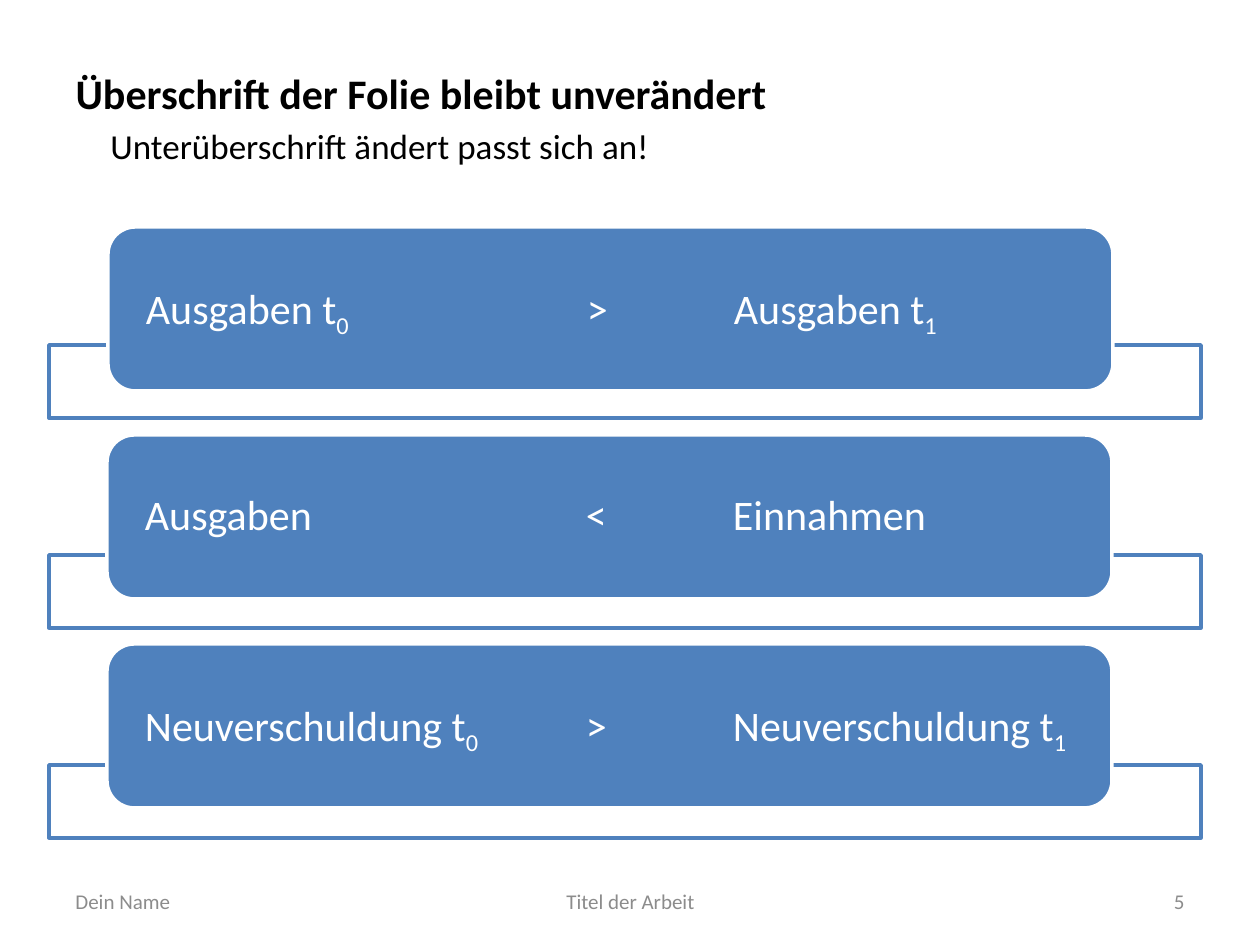
from lxml.etree import SubElement
from pptx import Presentation
from pptx.dml.color import RGBColor
from pptx.enum.shapes import MSO_SHAPE
from pptx.enum.text import MSO_ANCHOR, PP_ALIGN
from pptx.oxml.ns import qn
from pptx.util import Pt

SCALE = 914400 / 126
COLORS = {"blue": "4F81BD", "white": "FFFFFF", "black": "000000", "gray": "8C8C8C"}

TITLE = "Überschrift der Folie bleibt unverändert"
SUBTITLE = "Unterüberschrift ändert passt sich an!"
FOOTERS = [
    ("Dein Name", 63, 294, PP_ALIGN.LEFT),
    ("Titel der Arbeit", 431, 399, PP_ALIGN.CENTER),
    ("5", 903, 294, PP_ALIGN.RIGHT),
]
COMPARISONS = [
    (("Ausgaben t", "0"), ">", ("Ausgaben t", "1"), 108, 227),
    (("Ausgaben", ""), "<", ("Einnahmen", ""), 107, 435),
    (("Neuverschuldung t", "0"), ">", ("Neuverschuldung t", "1"), 107, 644),
]
BAR_WIDTH, BAR_HEIGHT = 1005, 164
FRAME_LEFT, FRAME_TOP, FRAME_WIDTH, FRAME_HEIGHT = 49, 345, 1152, 73
FRAME_STEP = 210
TAB_STOPS = (441, 588)


def px(value):
    return round(value * SCALE)


def color(name):
    return RGBColor.from_string(COLORS[name])


def set_values(target, values):
    for name, value in values.items():
        setattr(target, name, value)


def place(shape, left, top, width, height):
    set_values(shape, {"left": px(left), "top": px(top),
                       "width": px(width), "height": px(height)})


def add_run(paragraph, text, size, color_name, bold=False):
    run = paragraph.add_run()
    run.text = text
    set_values(run.font, {"name": "Calibri", "size": Pt(size), "bold": bold})
    run.font.color.rgb = color(color_name)
    return run


def write_line(shape, text, size, color_name, anchor=MSO_ANCHOR.MIDDLE,
               alignment=PP_ALIGN.LEFT, bold=False):
    set_values(shape.text_frame, {"word_wrap": True, "vertical_anchor": anchor})
    paragraph = shape.text_frame.paragraphs[0]
    paragraph.alignment = alignment
    add_run(paragraph, text, size, color_name, bold)


def add_box(slide, kind, bounds, fill, line):
    shape = slide.shapes.add_shape(kind, *map(px, bounds))
    shape.shadow.inherit = False
    shape.fill.solid()
    shape.fill.fore_color.rgb = color(fill)
    shape.line.color.rgb = color(line)
    shape.line.width = Pt(2)
    return shape


def write_comparison(bar, left_term, sign, right_term):
    set_values(bar.text_frame, {
        "word_wrap": True, "vertical_anchor": MSO_ANCHOR.MIDDLE,
        "margin_left": px(30), "margin_right": px(30),
        "margin_top": 0, "margin_bottom": 0,
    })
    paragraph = bar.text_frame.paragraphs[0]
    set_values(paragraph, {"alignment": PP_ALIGN.LEFT, "line_spacing": 0.9})
    tab_list = SubElement(paragraph._p.get_or_add_pPr(), qn("a:tabLst"))
    for position in TAB_STOPS:
        SubElement(tab_list, qn("a:tab"), pos=str(px(position)), algn="l")
    parts = [(left_term[0], False), (left_term[1], True),
             (f"\t{sign}\t{right_term[0]}", False), (right_term[1], True)]
    for text, is_subscript in parts:
        if text:
            run = add_run(paragraph, text, 24, "white")
            if is_subscript:
                run.font._element.set("baseline", "-25000")


def main():
    presentation = Presentation()
    set_values(presentation, {"slide_width": px(1260), "slide_height": px(945)})
    slide = presentation.slides.add_slide(presentation.slide_layouts[5])

    title = slide.shapes.title
    place(title, 63, 38, 1134, 110)
    write_line(title, TITLE, 24, "black", bold=True)

    subtitle = slide.shapes.add_textbox(px(98), px(118), px(906), px(55))
    write_line(subtitle, SUBTITLE, 20, "black", MSO_ANCHOR.TOP)

    for text, left, width, alignment in FOOTERS:
        footer = slide.shapes.add_textbox(px(left), px(876), px(width), px(50))
        write_line(footer, text, 12, "gray", alignment=alignment)

    for index, (left_term, sign, right_term, left, top) in enumerate(COMPARISONS):
        frame_bounds = (FRAME_LEFT, FRAME_TOP + index * FRAME_STEP, FRAME_WIDTH, FRAME_HEIGHT)
        frame = add_box(slide, MSO_SHAPE.RECTANGLE, frame_bounds, "white", "blue")
        fill_color = frame.fill._xPr.find(qn("a:solidFill"))[0]
        SubElement(fill_color, qn("a:alpha"), val="90000")
        bar = add_box(slide, MSO_SHAPE.ROUNDED_RECTANGLE,
                      (left, top, BAR_WIDTH, BAR_HEIGHT), "blue", "white")
        write_comparison(bar, left_term, sign, right_term)

    presentation.save("out.pptx")


if __name__ == "__main__":
    main()
